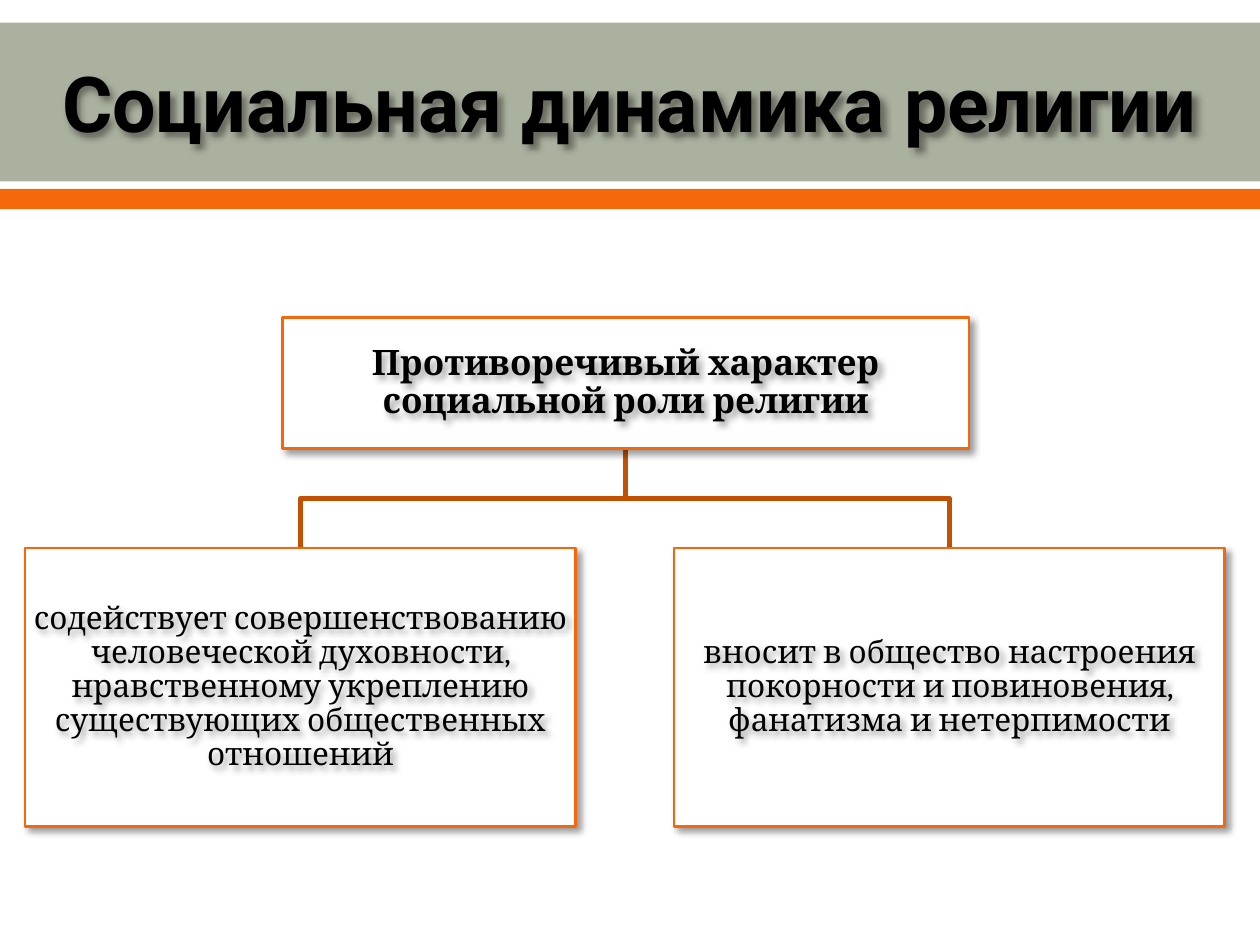
import pptx
import pptx.util
import pptx.dml.color
import pptx.enum.shapes
import pptx.enum.text
import pptx.oxml
import pptx.oxml.ns

INCH = pptx.util.Inches
WIDE, HIGH = 10, 7.5
ORANGE = "F4680B"
SHADE = (
    '<a:outerShdw %s blurRad="50800" dist="38100" dir="2700000" algn="tl" rotWithShape="0">'
    '<a:srgbClr val="000000"><a:alpha val="40000"/></a:srgbClr></a:outerShdw>'
    % pptx.oxml.ns.nsdecls("a")
)
ROOT = (2.24, 2.52, 5.45, 1.04)
LEAF_TOP, LEAF_WIDE, LEAF_HIGH = 4.35, 4.37, 2.21
LEAF_LEFT, LEAF_STEP = 0.2, 5.15
LEAVES = [
    "содействует совершенствованию человеческой духовности, "
    "нравственному укреплению существующих общественных отношений",
    "вносит в общество настроения покорности и повиновения, "
    "фанатизма и нетерпимости",
]


def color(code):
    """Return the colour for a hex string."""
    return pptx.dml.color.RGBColor.from_string(code)


def shade(shape):
    """Give a shape a soft drop shadow."""
    shape.shadow.inherit = False
    effects = shape._element.spPr.find(pptx.oxml.ns.qn("a:effectLst"))
    effects.append(pptx.oxml.parse_xml(SHADE))


def block(slide, area, fill, line=None):
    """Draw a flat rectangle, outlined if a line colour is given."""
    kind = pptx.enum.shapes.MSO_SHAPE.RECTANGLE
    shape = slide.shapes.add_shape(kind, *map(INCH, area))
    shape.fill.solid()
    shape.fill.fore_color.rgb = color(fill)
    if line:
        shape.line.color.rgb = color(line)
        shape.line.width = pptx.util.Pt(1.5)
    else:
        shape.line.fill.background()
    shape.shadow.inherit = False
    return shape


def label(slide, area, text, size, font, bold, inset, space):
    """Write centred, shadowed text in an area."""
    box = slide.shapes.add_textbox(*map(INCH, area))
    shade(box)
    frame = box.text_frame
    frame.word_wrap = True
    frame.vertical_anchor = pptx.enum.text.MSO_ANCHOR.MIDDLE
    frame.margin_left = frame.margin_right = INCH(inset[0])
    frame.margin_top = frame.margin_bottom = INCH(inset[1])
    para = frame.paragraphs[0]
    para.text = text
    para.alignment = pptx.enum.text.PP_ALIGN.CENTER
    para.line_spacing = space
    para.font.name = font
    para.font.size = pptx.util.Pt(size)
    para.font.bold = bold
    para.font.color.rgb = color("000000")


def node(slide, area, text, size, bold=False):
    """Draw one box of the tree with its text."""
    shade(block(slide, area, "FFFFFF", ORANGE))
    label(slide, area, text, size, "Cambria", bold, (0.01, 0.01), 0.9)


def branch(slide, area):
    """Draw the elbow line from the root down to a leaf."""
    start = ROOT[0] + ROOT[2] / 2
    top = ROOT[1] + ROOT[3]
    end = area[0] + area[2] / 2
    mid = (top + area[1]) / 2
    path = slide.shapes.build_freeform(INCH(start), INCH(top))
    points = [(start, mid), (end, mid), (end, area[1])]
    path.add_line_segments([(INCH(x), INCH(y)) for x, y in points], close=False)
    shape = path.convert_to_shape()
    shape.fill.background()
    shape.line.color.rgb = color("C15205")
    shape.line.width = pptx.util.Pt(3)
    shape.shadow.inherit = False


def main():
    """Build the slide and save it."""
    deck = pptx.Presentation()
    deck.slide_width, deck.slide_height = INCH(WIDE), INCH(HIGH)
    slide = deck.slides.add_slide(deck.slide_layouts[6])
    block(slide, (0, 0.18, WIDE, 1.26), "ABB19F")
    block(slide, (0, 1.5, WIDE, 0.16), ORANGE)
    label(slide, (0, 0.2, WIDE, 1.22), "Социальная динамика религии",
          44, "Roboto", True, (0.1, 0.05), 1.0)
    areas = [(LEAF_LEFT + i * LEAF_STEP, LEAF_TOP, LEAF_WIDE, LEAF_HIGH)
             for i in range(len(LEAVES))]
    for area in areas:
        branch(slide, area)
    node(slide, ROOT, "Противоречивый характер социальной роли религии", 20, True)
    for area, text in zip(areas, LEAVES):
        node(slide, area, text, 18)
    deck.save("out.pptx")


if __name__ == "__main__":
    main()
